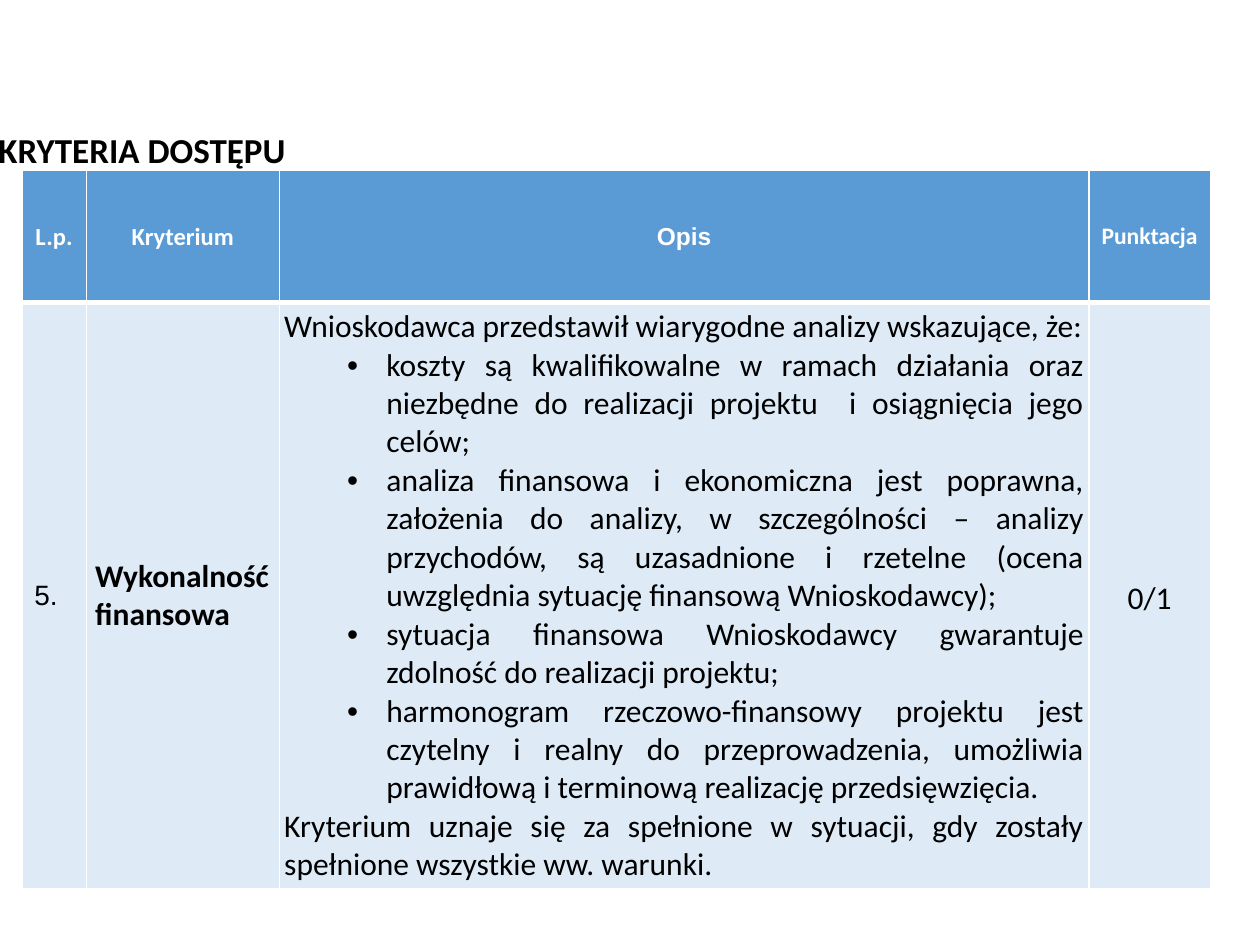
import pptx
import pptx.dml.color
import pptx.enum.text
import pptx.oxml
import pptx.oxml.ns
import pptx.util
from pptx.util import Cm

WHITE = pptx.dml.color.RGBColor(0xFF, 0xFF, 0xFF)
BLACK = pptx.dml.color.RGBColor(0, 0, 0)
HEADER_BLUE = pptx.dml.color.RGBColor(0x5B, 0x9B, 0xD5)
BODY_BLUE = pptx.dml.color.RGBColor(0xDE, 0xEB, 0xF7)

LEFT = pptx.enum.text.PP_ALIGN.LEFT
CENTER = pptx.enum.text.PP_ALIGN.CENTER
JUSTIFY = pptx.enum.text.PP_ALIGN.JUSTIFY
MIDDLE = pptx.enum.text.MSO_ANCHOR.MIDDLE

COLUMN_WIDTHS = [Cm(1.3), Cm(3.89), Cm(16.32), Cm(2.45)]
ROW_HEIGHTS = [Cm(2.66), Cm(11.61)]
THIN, THICK = 1, 3

HEADERS = [
    ("L.p.", 14, "Calibri"),
    ("Kryterium", 14, "Calibri"),
    ("Opis", 14, "Arial"),
    ("Punktacja", 13.5, "Calibri"),
]
INTRO = "Wnioskodawca przedstawił wiarygodne analizy wskazujące, że:"
CONDITIONS = [
    "koszty są kwalifikowalne w ramach działania oraz niezbędne do realizacji "
    "projektu  i osiągnięcia jego celów;",
    "analiza finansowa i ekonomiczna jest poprawna, założenia do analizy, "
    "w szczególności – analizy przychodów, są uzasadnione i rzetelne (ocena "
    "uwzględnia sytuację finansową Wnioskodawcy);",
    "sytuacja finansowa Wnioskodawcy gwarantuje zdolność do realizacji projektu;",
    "harmonogram rzeczowo-finansowy projektu jest czytelny i realny do "
    "przeprowadzenia, umożliwia prawidłową i terminową realizację przedsięwzięcia.",
]
CONCLUSION = ("Kryterium uznaje się za spełnione w sytuacji, gdy zostały "
              "spełnione wszystkie ww. warunki.")


def write(paragraph, text, size=18, font="Calibri", color=BLACK, bold=False,
          align=LEFT):
    paragraph.alignment = align
    run = paragraph.add_run()
    run.text = text
    run.font.size = pptx.util.Pt(size)
    run.font.name = font
    run.font.bold = bold
    run.font.color.rgb = color


def add_bullet(paragraph):
    paragraph.level = 1
    properties = paragraph._p.get_or_add_pPr()
    properties.set("marL", str(Cm(2.06)))
    properties.set("indent", str(-Cm(0.79)))
    bullet_font = pptx.oxml.ns.qn("a:buFont")
    properties.append(properties.makeelement(bullet_font, {"typeface": "Arial"}))
    bullet = pptx.oxml.ns.qn("a:buChar")
    properties.append(properties.makeelement(bullet, {"char": "•"}))


def set_borders(cell, top, bottom):
    """Draw white cell borders; top and bottom are widths in points."""
    properties = cell._tc.get_or_add_tcPr()
    sides = [("lnL", THIN), ("lnR", THIN), ("lnT", top), ("lnB", bottom)]
    for position, (side, width) in enumerate(sides):
        line = pptx.oxml.parse_xml(
            f'<a:{side} {pptx.oxml.ns.nsdecls("a")} w="{pptx.util.Pt(width)}">'
            f'<a:solidFill><a:srgbClr val="{WHITE}"/></a:solidFill></a:{side}>')
        properties.insert(position, line)


def style_cell(cell, fill, top, bottom):
    cell.vertical_anchor = MIDDLE
    cell.fill.solid()
    cell.fill.fore_color.rgb = fill
    set_borders(cell, top, bottom)


def set_margins(cell, horizontal, vertical):
    cell.margin_left = cell.margin_right = horizontal
    cell.margin_top = cell.margin_bottom = vertical


def fill_description(cell):
    frame = cell.text_frame
    write(frame.paragraphs[0], INTRO)
    for condition in CONDITIONS:
        paragraph = frame.add_paragraph()
        add_bullet(paragraph)
        write(paragraph, condition, align=JUSTIFY)
    write(frame.add_paragraph(), CONCLUSION, align=JUSTIFY)


def add_criteria_table(slide):
    table = slide.shapes.add_table(
        len(ROW_HEIGHTS), len(COLUMN_WIDTHS), Cm(0.44), Cm(3.44),
        sum(COLUMN_WIDTHS), sum(ROW_HEIGHTS)).table
    for column, width in zip(table.columns, COLUMN_WIDTHS):
        column.width = width
    for row, height in zip(table.rows, ROW_HEIGHTS):
        row.height = height

    header_cells, criterion_cells = (list(row.cells) for row in table.rows)
    for cell, (label, size, font) in zip(header_cells, HEADERS):
        style_cell(cell, HEADER_BLUE, THIN, THICK)
        write(cell.text_frame.paragraphs[0], label, size, font, WHITE, True, CENTER)
    for cell in criterion_cells:
        style_cell(cell, BODY_BLUE, THICK, THIN)

    number, criterion, description, score = criterion_cells
    write(number.text_frame.paragraphs[0], "5.", 16, "Arial")
    set_margins(criterion, Cm(0.18), 0)
    write(criterion.text_frame.paragraphs[0], "Wykonalność finansowa", bold=True)
    set_margins(description, Cm(0.1), Cm(0.1))
    fill_description(description)
    set_margins(score, Cm(0.1), Cm(0.1))
    score_line = score.text_frame.paragraphs[0]
    score_line.line_spacing = 1.15
    write(score_line, "0/1", align=CENTER)


def add_title(slide):
    frame = slide.shapes.add_textbox(
        Cm(-0.28), Cm(1.02), Cm(23.65), Cm(4.09)).text_frame
    frame.word_wrap = True
    frame.vertical_anchor = MIDDLE
    title = frame.paragraphs[0]
    title.line_spacing = 0.9
    write(title, "KRYTERIA DOSTĘPU", 20, bold=True)


def main():
    presentation = pptx.Presentation()
    presentation.slide_width = Cm(25.4)
    presentation.slide_height = Cm(19.05)
    slide = presentation.slides.add_slide(presentation.slide_layouts[6])
    add_criteria_table(slide)
    add_title(slide)
    presentation.save("out.pptx")


if __name__ == "__main__":
    main()
